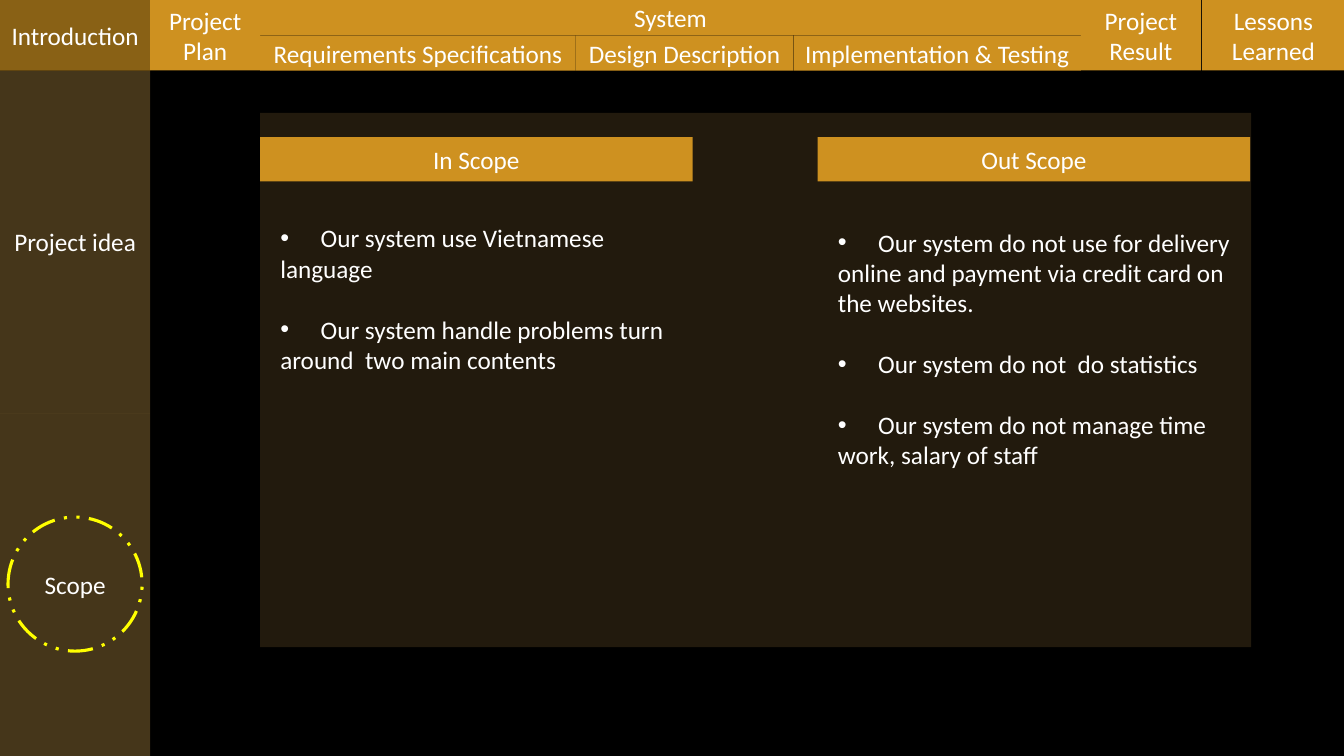
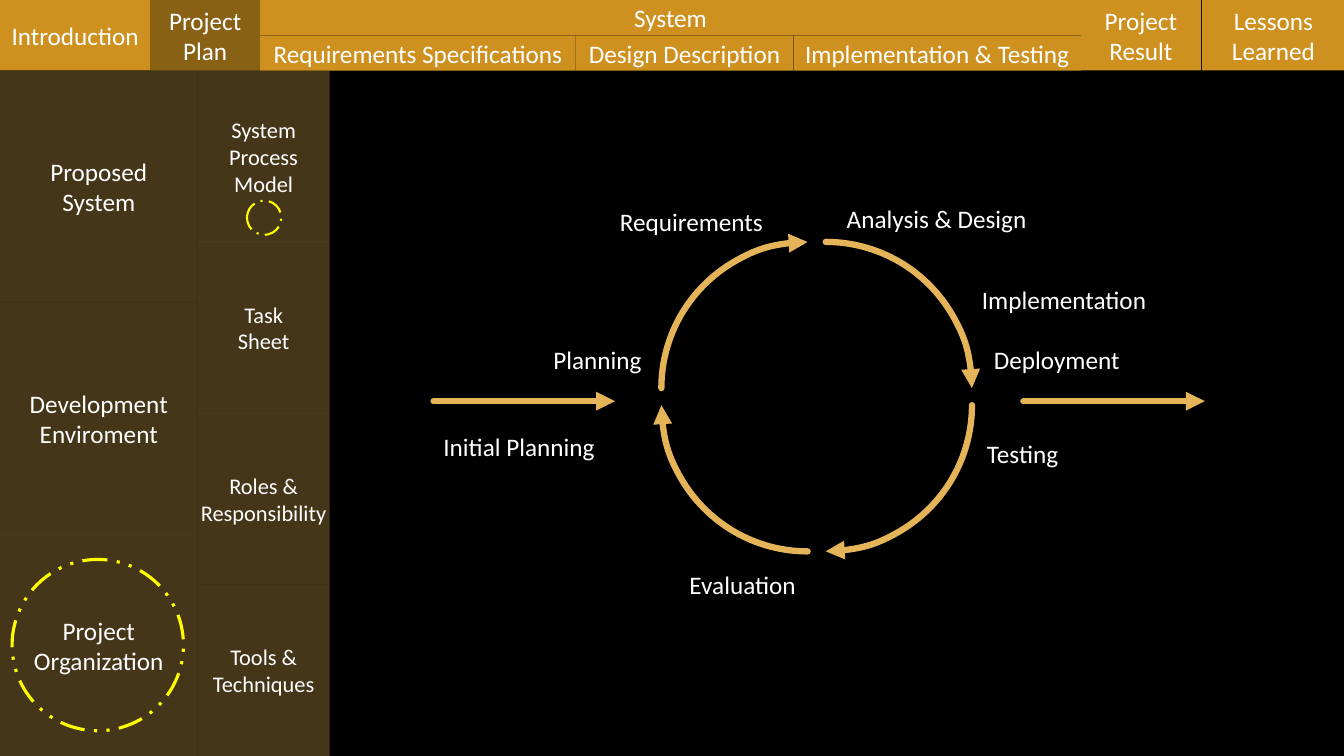
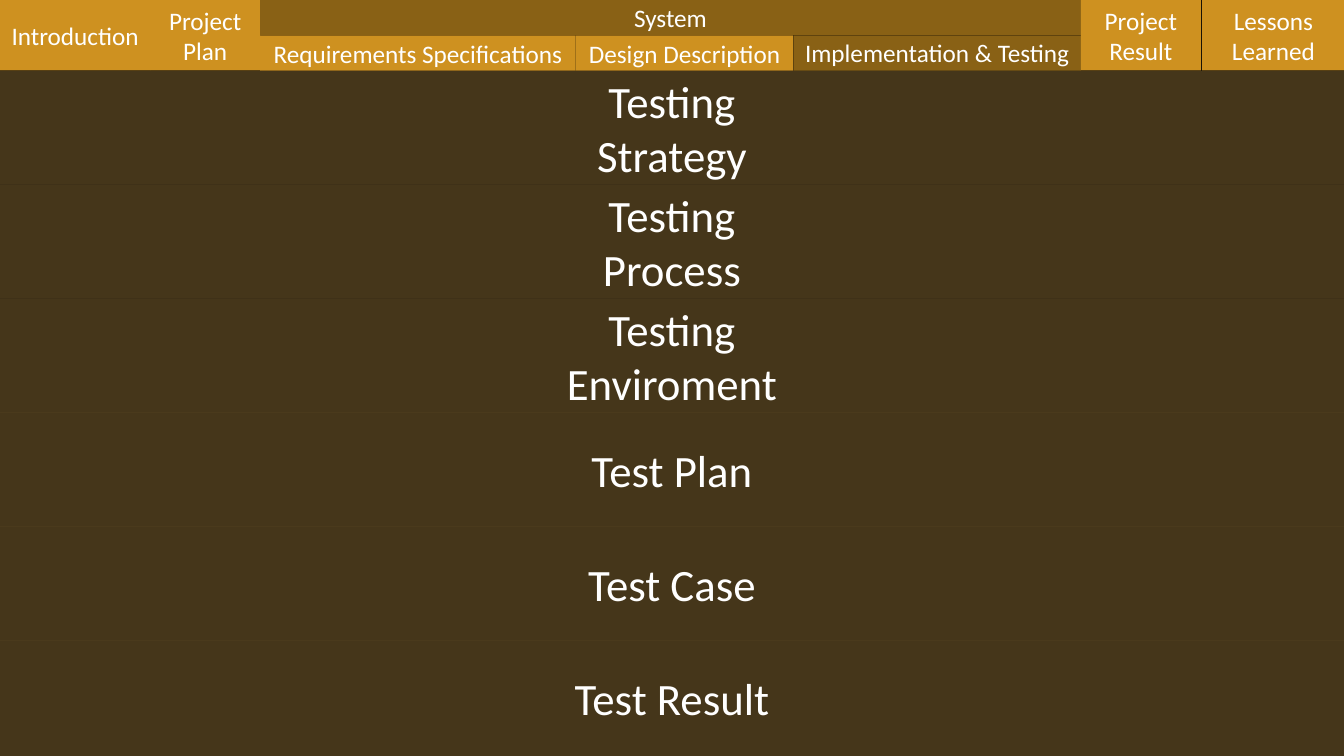
from lxml import etree
from pptx import Presentation
from pptx.dml.color import RGBColor
from pptx.enum import dml, shapes, text
from pptx.oxml.ns import qn
from pptx.util import Inches, Pt

FONT, WHITE, BLACK = "Calibri", "FFFFFF", "000000"
GOLD, DARK_GOLD, SAND, YELLOW = "CE9120", "896115", "E5B458", "FFFF00"
WIDTH, HEIGHT, NAV_HEIGHT = 13.33, 7.5, 0.7

# label: left, top, width, height
NAV = {
    "Introduction": (0, 0, 1.49, 0.7),
    "Project Plan": (1.49, 0, 1.09, 0.7),
    "System": (2.58, 0, 8.14, 0.35),
    "Requirements Specifications": (2.58, 0.35, 3.13, 0.35),
    "Design Description": (5.71, 0.35, 2.16, 0.35),
    "Implementation & Testing": (7.87, 0.35, 2.85, 0.35),
    "Project Result": (10.72, 0, 1.19, 0.7),
    "Lessons Learned": (11.92, 0, 1.42, 0.7),
}

# heading, left, list top, list height, items
SCOPE = [
    ("In Scope", 2.58, 2.16, 1.62, [
        "Our system use Vietnamese language",
        "Our system handle problems turn around  two main contents",
    ]),
    ("Out Scope", 8.11, 2.2, 2.52, [
        "Our system do not use for delivery online and payment via credit card on the websites.",
        "Our system do not  do statistics",
        "Our system do not manage time work, salary of staff",
    ]),
]

PLAN_SECTIONS = ["Proposed\nSystem", "Development\nEnviroment", "Project\nOrganization"]
ORGANIZATION_TOPICS = ["System\nProcess\nModel", "Task\nSheet",
                       "Roles &\nResponsibility", "Tools &\nTechniques"]
TESTING_TOPICS = ["Testing\nStrategy", "Testing\nProcess", "Testing\nEnviroment",
                  "Test Plan", "Test Case", "Test Result"]

PHASES = [  # label, left, top
    ("Initial Planning", 4.3, 4.23), ("Planning", 5.39, 3.37),
    ("Requirements", 6.05, 2), ("Analysis & Design", 8.3, 1.97),
    ("Implementation", 9.64, 2.77), ("Deployment", 9.76, 3.37),
    ("Testing", 9.69, 4.3), ("Evaluation", 6.74, 5.6),
]
CYCLE_ARCS = [(6.74, 2.4), (6.74, 2.57), (6.56, 2.57), (6.56, 2.4)]  # clockwise
ARC_SIZE, ARROW_Y, ARROW_LENGTH = 2.9, 3.98, 1.8
ARROW_STARTS = [4.3, 10.15]


def rgb(value):
    return RGBColor.from_string(value)


def paint(shape, color, opacity=100):
    shape.fill.solid()
    shape.fill.fore_color.rgb = rgb(color)
    if opacity < 100:
        tint = shape._element.spPr.find(".//" + qn("a:srgbClr"))
        etree.SubElement(tint, qn("a:alpha")).set("val", str(opacity * 1000))


def write(shape, words, size=18, align=text.PP_ALIGN.CENTER,
          anchor=text.MSO_ANCHOR.MIDDLE, side=0.1, bullets=False):
    """Fill a shape with one paragraph for each line of words."""
    frame = shape.text_frame
    frame.auto_size = text.MSO_AUTO_SIZE.NONE
    frame.word_wrap = True
    frame.vertical_anchor = anchor
    frame.margin_left = frame.margin_right = Inches(side)
    frame.margin_top = frame.margin_bottom = Inches(0.05)
    for i, line in enumerate(words.split("\n")):
        paragraph = frame.add_paragraph() if i else frame.paragraphs[0]
        if bullets:
            add_bullet(paragraph)
        paragraph.alignment = align
        paragraph.space_before = Pt(22 if bullets and i else 0)
        run = paragraph.add_run()
        run.text = "\t" + line if bullets else line
        run.font.name, run.font.size, run.font.bold = FONT, Pt(size), False
        run.font.color.rgb = rgb(WHITE)


def add_bullet(paragraph):
    """Bullet with a tabbed first line; wrapped lines return to the margin."""
    props = paragraph._p.get_or_add_pPr()
    props.set("marL", "0")
    props.set("indent", "0")
    etree.SubElement(props, qn("a:buChar")).set("char", "•")
    stops = etree.SubElement(props, qn("a:tabLst"))
    etree.SubElement(stops, qn("a:tab"), pos=str(Inches(0.4)), algn="l")


def place(slide, placeholder, box):
    """Position a placeholder and bring it to the front."""
    (placeholder.left, placeholder.top,
     placeholder.width, placeholder.height) = map(Inches, box)
    slide.shapes._spTree.append(placeholder._element)
    return placeholder


def add_preset(slide, box, preset=shapes.MSO_SHAPE.RECTANGLE):
    shape = slide.shapes.add_shape(preset, *map(Inches, box))
    shape.shadow.inherit = False
    shape.fill.background()
    shape.line.fill.background()
    return shape


def add_nav(slide, title, also_active=()):
    """Draw the tab bar; the current tab is the slide title."""
    for label, box in NAV.items():
        current = label == title
        tab = place(slide, slide.shapes.title, box) if current else add_preset(slide, box)
        paint(tab, DARK_GOLD if current or label in also_active else GOLD)
        write(tab, label)


def add_panels(slide, left, width, labels, height, size=18):
    """Stack panels under the tab bar; the last one reaches the bottom edge."""
    for i, label in enumerate(labels):
        top = NAV_HEIGHT + i * height
        last = i == len(labels) - 1
        panel = add_preset(slide, (left, top, width, HEIGHT - top if last else height))
        paint(panel, SAND, 30)
        write(panel, label, size, side=0)


def add_marker(slide, left, top, size, weight=2.25, dash=dml.MSO_LINE.DASH_DOT_DOT):
    ring = add_preset(slide, (left, top, size, size), shapes.MSO_SHAPE.OVAL)
    ring.line.color.rgb = rgb(YELLOW)
    ring.line.width = Pt(weight)
    ring.line.dash_style = dash


def make_arrow(shape):
    shape.line.color.rgb = rgb(SAND)
    shape.line.width = Pt(4.5)
    outline = shape._element.spPr.find(qn("a:ln"))
    outline.set("cap", "rnd")
    etree.SubElement(outline, qn("a:tailEnd")).set("type", "triangle")


def build_scope(slide):
    paint(add_preset(slide, (2.58, 1.12, 9.83, 5.3)), SAND, 15)
    add_panels(slide, 0, 1.49, ["Project idea", "Scope"], 3.4)
    add_marker(slide, 0.08, 5.13, 1.33)
    add_nav(slide, "Introduction")
    _, *parts = slide.placeholders
    for (heading, left, top, height, items), head, body in zip(SCOPE, parts[::2], parts[1::2]):
        paint(place(slide, head, (left, 1.36, 4.29, 0.44)), GOLD)
        write(head, heading)
        place(slide, body, (left + 0.1, top, 4.1, height))
        write(body, "\n".join(items), align=text.PP_ALIGN.LEFT,
              anchor=text.MSO_ANCHOR.TOP, bullets=True)


def build_process(slide):
    add_panels(slide, 0, 1.96, PLAN_SECTIONS, 2.3)
    add_marker(slide, 0.12, 5.55, 1.7)
    add_panels(slide, 1.96, 1.31, ORGANIZATION_TOPICS, 1.7, 16)
    add_marker(slide, 2.45, 1.99, 0.34, 1.5, dml.MSO_LINE.LONG_DASH_DOT)
    for i, (left, top) in enumerate(CYCLE_ARCS):
        arc = add_preset(slide, (left, top, ARC_SIZE, ARC_SIZE), shapes.MSO_SHAPE.ARC)
        arc.rotation = 90 * i
        make_arrow(arc)
    for start in ARROW_STARTS:
        ends = map(Inches, (start, ARROW_Y, start + ARROW_LENGTH, ARROW_Y))
        arrow = slide.shapes.add_connector(shapes.MSO_CONNECTOR.STRAIGHT, *ends)
        make_arrow(arrow)
        etree.SubElement(arrow._element.spPr, qn("a:effectLst"))
    for phase, left, top in PHASES:
        label = slide.shapes.add_textbox(*map(Inches, (left, top, 2.1, 0.4)))
        write(label, phase, align=text.PP_ALIGN.LEFT, anchor=text.MSO_ANCHOR.TOP)
    add_nav(slide, "Project Plan")


def build_testing(slide):
    add_nav(slide, "Implementation & Testing", also_active=("System",))
    add_panels(slide, 0, WIDTH, TESTING_TOPICS, 1.13, 32)


def main():
    prs = Presentation()
    prs.slide_width, prs.slide_height = Inches(WIDTH), Inches(HEIGHT)
    background = prs.slide_master.background.fill
    background.solid()
    background.fore_color.rgb = rgb(BLACK)
    for layout, build in (("Comparison", build_scope), ("Title Only", build_process),
                          ("Title Only", build_testing)):
        build(prs.slides.add_slide(prs.slide_layouts.get_by_name(layout)))
    prs.save("out.pptx")


if __name__ == "__main__":
    main()
